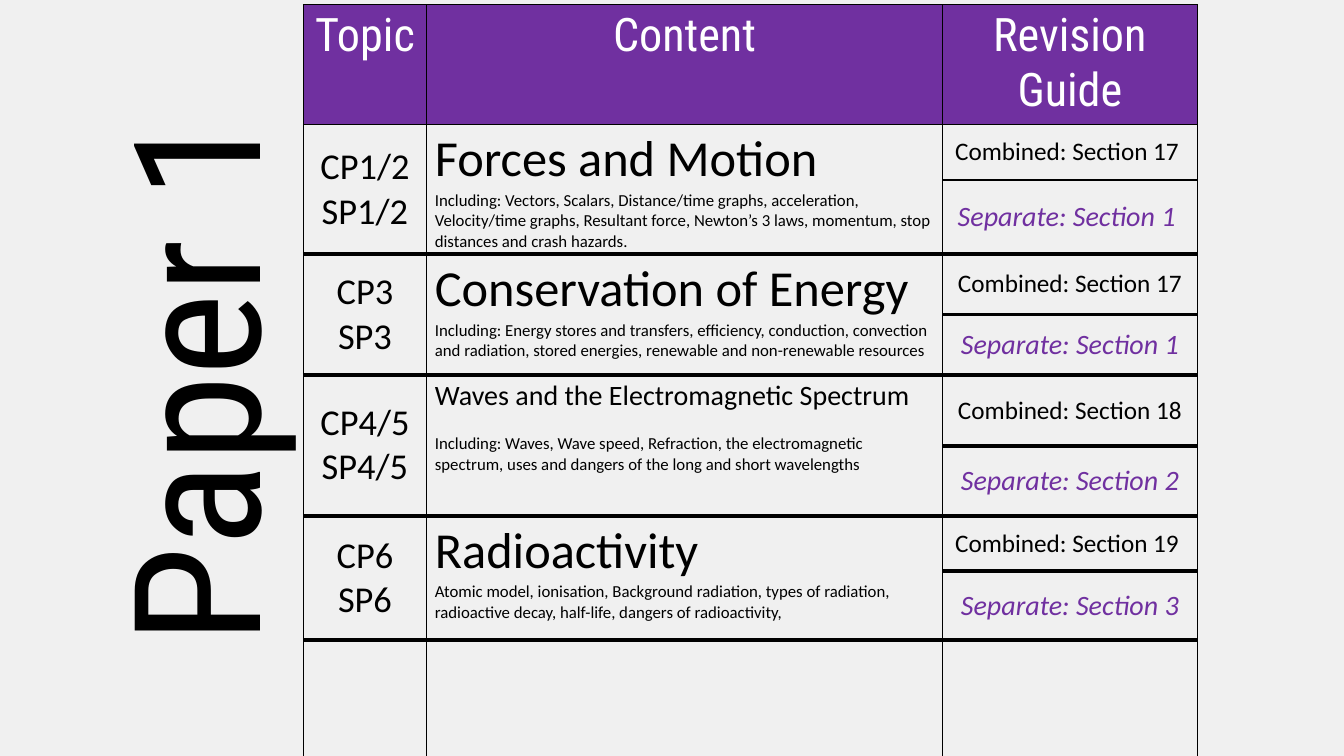
import pptx
import pptx.dml.color
import pptx.enum.text
import pptx.oxml.ns
import pptx.util
from collections import namedtuple
from lxml import etree

Cm = pptx.util.Cm
Pt = pptx.util.Pt
Align = pptx.enum.text.PP_ALIGN
Anchor = pptx.enum.text.MSO_ANCHOR
qn = pptx.oxml.ns.qn

Box = namedtuple("Box", "left top width height")
Topic = namedtuple("Topic", "codes heading detail combined separate heading_size gap inner_line heights")

PURPLE, BLACK, WHITE, PALE = "7030A0", "000000", "FFFFFF", "F0F0F0"
THIN, THICK = 1, 3
HEADINGS = ["Topic", "Content", "Revision Guide"]
COLUMN_SHARES = [0.1376, 0.5777, 0.2847]
HEADER_HEIGHT, LAST_HEIGHT = 1.88, 3.63

FORMATS = {
    "title": {"size": Pt(125.9), "name": "Roboto Condensed", "color": BLACK},
    "header": {"size": Pt(33), "name": "Roboto Condensed", "color": WHITE},
    "code": {"size": Pt(26), "name": "Calibri", "color": BLACK},
    "heading": {"size": Pt(36), "name": "Calibri", "color": BLACK},
    "detail": {"size": Pt(12), "name": "Calibri", "color": BLACK},
    "combined": {"size": Pt(18), "name": "Calibri", "color": BLACK},
    "separate": {"size": Pt(20), "name": "Calibri", "color": PURPLE, "italic": True},
}

TOPICS = [
    Topic(["CP1/2", "SP1/2"], "Forces and Motion",
          "Including: Vectors, Scalars, Distance/time graphs, acceleration, Velocity/time graphs, "
          "Resultant force, Newton’s 3 laws, momentum, stop distances and crash hazards.",
          "Combined: Section 17 ", "Separate: Section 1 ", 36, 0, THIN, (1.4, 1.63)),
    Topic(["CP3", "SP3"], "Conservation of Energy",
          "Including: Energy stores and transfers, efficiency, conduction, convection and radiation, "
          "stored energies, renewable and non-renewable resources",
          "Combined: Section 17", "Separate: Section 1", 36, 0, THICK, (1.52, 1.52)),
    Topic(["CP4/5", "SP4/5"], "Waves and the Electromagnetic Spectrum",
          "Including: Waves, Wave speed, Refraction, the electromagnetic spectrum, "
          "uses and dangers of the long and short wavelengths",
          "Combined: Section 18", "Separate: Section 2", 20, 14.6, THICK, (1.8, 1.75)),
    Topic(["CP6", "SP6"], "Radioactivity",
          "Atomic model, ionisation, Background radiation, types of radiation, "
          "radioactive decay, half-life, dangers of radioactivity,",
          "Combined: Section 19 ", "Separate: Section 3", 36, 0, THICK, (1.4, 1.73)),
]


def paint(color_format, value):
    color_format.rgb = pptx.dml.color.RGBColor.from_string(value)


def write(frame, lines, align):
    for index, (text, format_values) in enumerate(lines):
        para = frame.paragraphs[0] if index == 0 else frame.add_paragraph()
        para.alignment = align
        span = para.add_run()
        span.text = text
        for name, value in format_values.items():
            if name == "color":
                paint(span.font.color, value)
            elif name == "space_before":
                para.space_before = value
            else:
                setattr(span.font, name, value)


def set_borders(cell, top, bottom):
    properties = cell._tc.get_or_add_tcPr()
    for side, width in {"L": THIN, "R": THIN, "T": top, "B": bottom}.items():
        line = etree.SubElement(properties, qn(f"a:ln{side}"), w=str(Pt(width)))
        fill = etree.SubElement(line, qn("a:solidFill"))
        etree.SubElement(fill, qn("a:srgbClr"), val=BLACK)


def style_cell(cell, top, bottom, fill=None):
    set_borders(cell, top, bottom)
    for side, margin in {"left": 0.21, "right": 0.21, "top": 0.11, "bottom": 0.11}.items():
        setattr(cell, f"margin_{side}", Cm(margin))
    if fill:
        cell.fill.solid()
        paint(cell.fill.fore_color, fill)
    else:
        cell.fill.background()


def fill_topic(table, row, topic, top_line):
    for column in range(3):
        inner = topic.inner_line if column == 2 else THICK
        style_cell(table.cell(row, column), top_line, inner)
        style_cell(table.cell(row + 1, column), inner, THICK)
    for column in range(2):
        table.cell(row, column).merge(table.cell(row + 1, column))

    heading = FORMATS["heading"] | {"size": Pt(topic.heading_size)}
    detail = FORMATS["detail"] | {"space_before": Pt(topic.gap)}
    write(table.cell(row, 1).text_frame, [(topic.heading, heading), (topic.detail, detail)], Align.LEFT)
    centred = [
        (table.cell(row, 0), [(code, FORMATS["code"]) for code in topic.codes]),
        (table.cell(row, 2), [(topic.combined, FORMATS["combined"])]),
        (table.cell(row + 1, 2), [(topic.separate, FORMATS["separate"])]),
    ]
    for cell, lines in centred:
        cell.vertical_anchor = Anchor.MIDDLE
        write(cell.text_frame, lines, Align.CENTER)


def add_topic_table(page, box):
    heights = [HEADER_HEIGHT, *(height for topic in TOPICS for height in topic.heights), LAST_HEIGHT]
    table = page.shapes.add_table(len(heights), len(HEADINGS), *map(Cm, box)).table
    table.first_row = table.horz_banding = False
    for column, share in zip(table.columns, COLUMN_SHARES):
        column.width = Cm(box.width * share)
    for row, height in zip(table.rows, heights):
        row.height = Cm(height)

    for column, heading in enumerate(HEADINGS):
        cell = table.cell(0, column)
        style_cell(cell, THIN, THIN, PURPLE)
        write(cell.text_frame, [(heading, FORMATS["header"])], Align.CENTER)
        style_cell(table.cell(len(heights) - 1, column), THICK, THIN)
    for index, topic in enumerate(TOPICS):
        fill_topic(table, 1 + 2 * index, topic, THICK if index else THIN)


def add_side_title(page, box):
    title = page.shapes.title
    for name, value in box._asdict().items():
        setattr(title, name, Cm(value))
    title.rotation = 270
    frame = title.text_frame
    frame.word_wrap = True
    frame.auto_size = pptx.enum.text.MSO_AUTO_SIZE.SHAPE_TO_FIT_TEXT
    frame.vertical_anchor = Anchor.TOP
    write(frame, [("Paper 1", FORMATS["title"])], Align.CENTER)


def main():
    deck = pptx.Presentation()
    deck.slide_width, deck.slide_height = Cm(33.87), Cm(19.05)
    page = deck.slides.add_slide(deck.slide_layouts[5])
    page.background.fill.solid()
    paint(page.background.fill.fore_color, PALE)
    add_side_title(page, Box(-2.92, 6.71, 15.47, 5.64))
    add_topic_table(page, Box(7.65, 0.12, 22.52, 18.26))
    deck.save("out.pptx")


if __name__ == "__main__":
    main()
